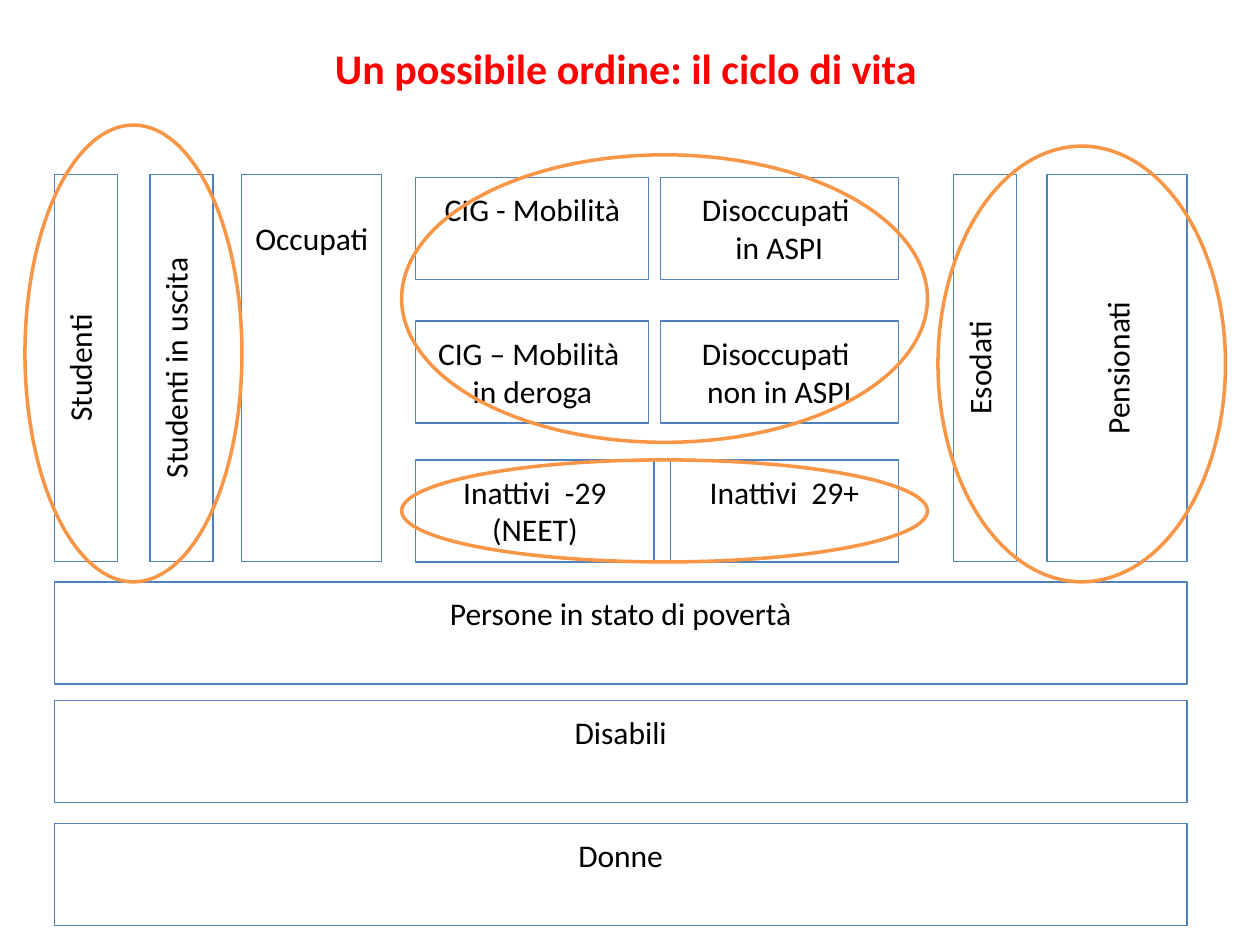
from pptx import Presentation
from pptx.dml.color import RGBColor
from pptx.enum.shapes import MSO_SHAPE
from pptx.enum.text import MSO_ANCHOR, PP_ALIGN
from pptx.util import Pt

RECTANGLE, OVAL = MSO_SHAPE.RECTANGLE, MSO_SHAPE.OVAL
LEFT, CENTER = PP_ALIGN.LEFT, PP_ALIGN.CENTER
TOP = MSO_ANCHOR.TOP

BLACK = RGBColor(0x00, 0x00, 0x00)
RED = RGBColor(0xFF, 0x00, 0x00)
BLUE = RGBColor(0x4F, 0x81, 0xBD)
ORANGE = RGBColor(0xF7, 0x96, 0x46)

COLUMN_HEIGHT = 221
ROW_HEIGHT = 58.3
INSET = 7.2
LINE_HEIGHT = 22


def write_text(frame, text, size=18, color=BLACK, bold=False, align=CENTER):
    frame.word_wrap = True
    frame.vertical_anchor = TOP
    for index, line in enumerate(text.split("\n")):
        paragraph = frame.paragraphs[0] if index == 0 else frame.add_paragraph()
        paragraph.alignment = align
        run = paragraph.add_run()
        run.text = line
        run.font.name = "Calibri"
        run.font.size = Pt(size)
        run.font.bold = bold
        run.font.color.rgb = color


def add_outline(slide, preset, box, color, width):
    outline = slide.shapes.add_shape(preset, *map(Pt, box))
    outline.shadow.inherit = False
    outline.fill.background()
    outline.line.color.rgb = color
    outline.line.width = Pt(width)
    return outline


def add_group_box(slide, box, text, vertical=False, offset=INSET):
    """Offset is the gap between the first line and the edge it starts from."""
    frame = add_outline(slide, RECTANGLE, box, BLUE, 0.75).text_frame
    frame.margin_left = frame.margin_right = Pt(3.6)
    if vertical:
        frame._txBody.bodyPr.set("vert", "vert270")
        frame.margin_left = Pt(offset)
    else:
        frame.margin_top = Pt(offset)
    write_text(frame, text)


def add_title(slide, box):
    title = slide.shapes.add_textbox(*map(Pt, box))
    write_text(title.text_frame, "Un possibile ordine: il ciclo di vita",
               size=24, color=RED, bold=True, align=LEFT)


def add_life_stages(slide, top):
    stages = [
        ("Studenti", 31, 36, True, INSET),
        ("Studenti in uscita", 85.7, 36, True, INSET),
        ("Occupati", 138.2, 80, False, 3.6 + LINE_HEIGHT),
        ("Esodati", 545, 36, True, INSET),
        ("Pensionati", 598.3, 80, True, INSET + LINE_HEIGHT),
    ]
    for text, left, width, vertical, offset in stages:
        add_group_box(slide, (left, top, width, COLUMN_HEIGHT), text, vertical, offset)


def add_out_of_work(slide, left, right):
    """Rows of paired boxes between the two outer edges."""
    rows = [
        (101.5, 133.2, 136.1, "CIG - Mobilità", "Disoccupati \nin ASPI"),
        (183.5, 133.2, 136.1, "CIG – Mobilità \nin deroga", "Disoccupati \nnon in ASPI"),
        (262.8, 136.1, 130.3, "Inattivi  -29\n(NEET)", "Inattivi  29+"),
    ]
    for top, first_width, second_width, first, second in rows:
        add_group_box(slide, (left, top, first_width, ROW_HEIGHT), first)
        add_group_box(slide, (right - second_width, top, second_width, ROW_HEIGHT), second)


def add_cross_groups(slide, left, width):
    bands = [("Persone in stato di povertà", 332.5), ("Disabili", 400.3), ("Donne", 470.7)]
    for text, top in bands:
        add_group_box(slide, (left, top, width, ROW_HEIGHT), text)


def add_highlights(slide):
    ovals = [
        (14.3, 71.5, 124, 261),
        (229.5, 88.5, 300.5, 164.3),
        (229.5, 262.8, 300.5, ROW_HEIGHT),
        (536, 83.5, 164.3, 249),
    ]
    for box in ovals:
        add_outline(slide, OVAL, box, ORANGE, 2)


def main():
    deck = Presentation()
    deck.slide_width, deck.slide_height = Pt(720), Pt(540)
    slide = deck.slides.add_slide(deck.slide_layouts[6])
    add_title(slide, (184.3, 21, 374, 36))
    add_life_stages(slide, 99.8)
    add_out_of_work(slide, 237.6, 513.4)
    add_cross_groups(slide, 31, 647.3)
    add_highlights(slide)
    deck.save("out.pptx")


if __name__ == "__main__":
    main()
